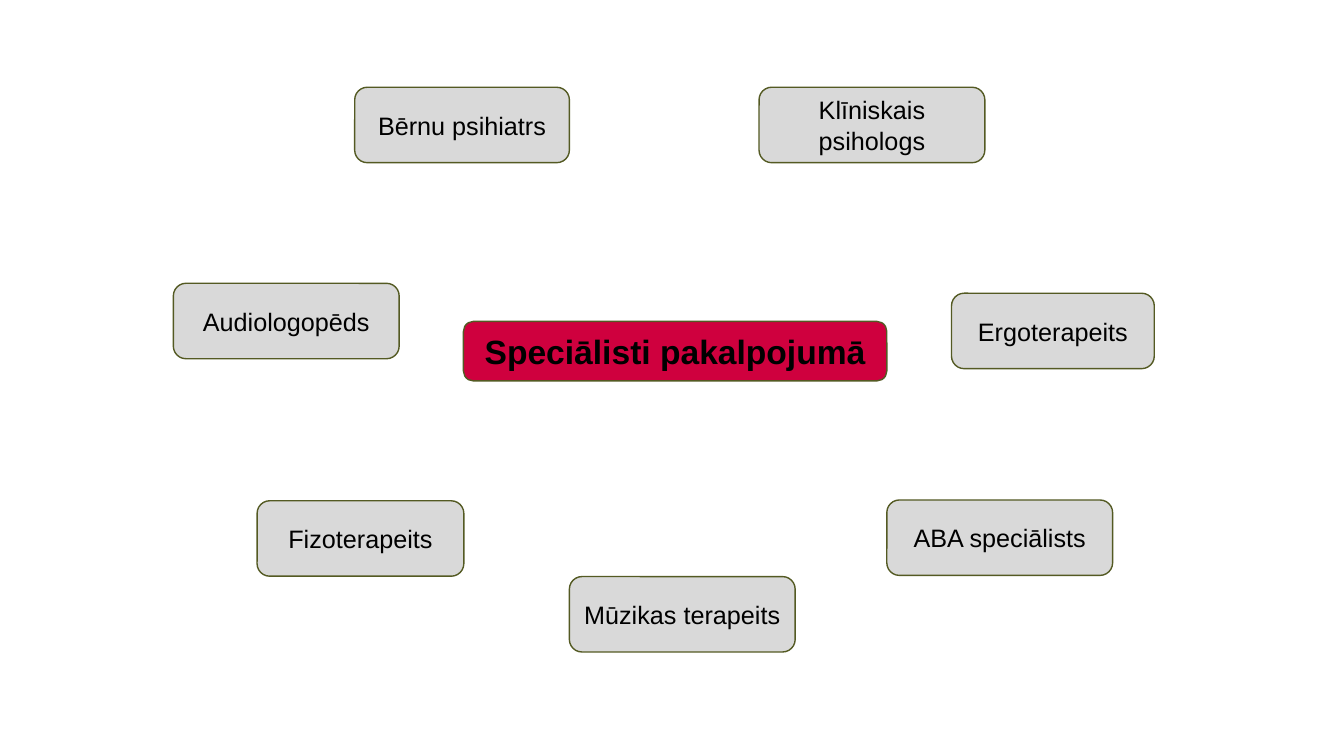
from pptx import Presentation
from pptx.dml.color import RGBColor
from pptx.enum.shapes import MSO_SHAPE
from pptx.enum.text import MSO_ANCHOR, PP_ALIGN
from pptx.util import Cm, Pt

CRIMSON = RGBColor(0xCF, 0x00, 0x3E)
GREY = RGBColor(0xD9, 0xD9, 0xD9)
OLIVE = RGBColor(0x54, 0x5A, 0x23)
BLACK = RGBColor(0x00, 0x00, 0x00)

TOPIC = ("Speciālisti pakalpojumā", 11.68, 8.1, 10.67)
TOPIC_HEIGHT = 1.5
SPECIALIST_HEIGHT = 1.9
WIDE = 5.69
SPECIALISTS = [
    ("Bērnu psihiatrs", 8.94, 2.2, 5.41),
    ("Klīniskais psihologs", 19.13, 2.2, WIDE),
    ("Fizoterapeits", 6.48, 12.62, 5.21),
    ("Ergoterapeits", 23.98, 7.39, 5.11),
    ("Audiologopēds", 4.37, 7.14, WIDE),
    ("ABA speciālists", 22.35, 12.6, WIDE),
    ("Mūzikas terapeits", 14.35, 14.53, WIDE),
]


def add_box(slide, text, left, top, width, height, fill, size, bold=False):
    """Add a rounded box with centred text."""
    sp = slide.shapes.add_shape(
        MSO_SHAPE.ROUNDED_RECTANGLE, Cm(left), Cm(top), Cm(width), Cm(height))
    sp.shadow.inherit = False
    sp.fill.solid()
    sp.fill.fore_color.rgb = fill
    sp.line.color.rgb = OLIVE
    sp.line.width = Pt(1)
    tf = sp.text_frame
    tf.word_wrap = True
    tf.vertical_anchor = MSO_ANCHOR.MIDDLE
    p = tf.paragraphs[0]
    p.text = text
    p.alignment = PP_ALIGN.CENTER
    p.font.name = "Arial"
    p.font.size = Pt(size)
    p.font.bold = bold
    p.font.color.rgb = BLACK


def main():
    """Build the slide of specialists around the central topic."""
    prs = Presentation()
    prs.slide_width, prs.slide_height = Cm(33.87), Cm(19.05)
    s = prs.slides.add_slide(prs.slide_layouts[6])
    add_box(s, *TOPIC, TOPIC_HEIGHT, CRIMSON, 24, bold=True)
    for specialist in SPECIALISTS:
        add_box(s, *specialist, SPECIALIST_HEIGHT, GREY, 18)
    prs.save("out.pptx")


if __name__ == "__main__":
    main()
